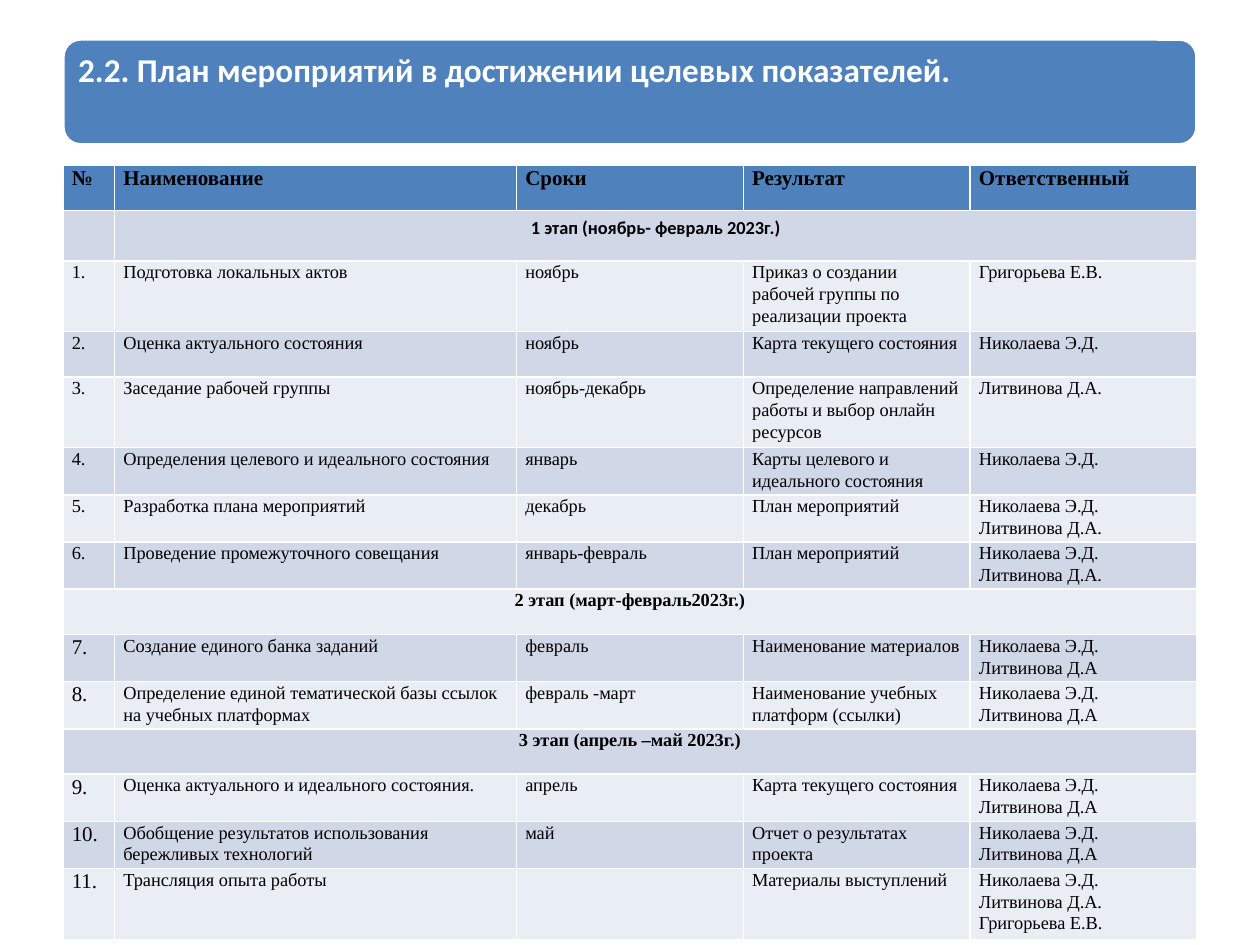
from dataclasses import dataclass

from lxml import etree
from pptx import Presentation
from pptx import util as u
from pptx.dml.color import RGBColor
from pptx.enum import shapes, text
from pptx.oxml import ns


@dataclass(frozen=True)
class Theme:
    blue: str = "4F81BD"
    dark: str = "D0D8E8"
    light: str = "E9EDF4"
    white: str = "FFFFFF"
    black: str = "000000"
    serif: str = "Times New Roman"
    sans: str = "Calibri"
    title: float = 19
    head: float = 12
    body: float = 10.5


@dataclass(frozen=True)
class Task:
    name: str
    term: str
    result: str
    staff: str
    high: float = 0.36


@dataclass(frozen=True)
class Stage:
    label: str
    tasks: tuple[Task, ...]


@dataclass(frozen=True)
class Style:
    size: float
    bold: bool = False
    font: str = Theme.serif
    color: str = Theme.black


THEME = Theme()
LEFT, WIDTH = 0.5, 9
COLS = (0.41, 3.19, 1.8, 1.8, 1.8)
LOW, TALL = 0.36, 0.54
TITLE = "2.2. План мероприятий в достижении целевых показателей.\v"
HEADS = ("№", "Наименование", "Сроки", "Результат", "Ответственный")
GRIG, NIK, LIT = "Григорьева Е.В.", "Николаева Э.Д.", "Литвинова Д.А."
PAIR = f"{NIK}\n{LIT}"
DUO = PAIR[:-1]
STAGES = (
    Stage("1 этап (ноябрь- февраль 2023г.)", (
        Task("Подготовка локальных актов", "ноябрь",
             "Приказ о создании рабочей группы по реализации проекта", GRIG, TALL),
        Task("Оценка актуального состояния", "ноябрь", "Карта текущего состояния", NIK),
        Task("Заседание рабочей группы", "ноябрь-декабрь",
             "Определение направлений работы и выбор онлайн ресурсов", LIT, TALL),
        Task("Определения целевого и идеального состояния", "январь",
             "Карты целевого и идеального состояния", NIK),
        Task("Разработка плана мероприятий", "декабрь", "План мероприятий", PAIR),
        Task("Проведение промежуточного совещания", "январь-февраль",
             "План мероприятий", PAIR),
    )),
    Stage("2 этап (март-февраль2023г.)", (
        Task("Создание единого банка заданий", "февраль", "Наименование материалов", DUO),
        Task("Определение единой тематической базы ссылок на учебных платформах",
             "февраль -март", "Наименование учебных платформ (ссылки)", DUO),
    )),
    Stage("3 этап (апрель –май 2023г.)", (
        Task("Оценка актуального и идеального состояния.", "апрель",
             "Карта текущего состояния", DUO),
        Task("Обобщение результатов использования бережливых технологий", "май",
             "Отчет о результатах проекта", DUO),
        Task("Трансляция опыта работы", "", "Материалы выступлений",
             f"{PAIR}\n{GRIG}", TALL),
    )),
)


def paint(frame, words: str, style: Style, space: float, align=None) -> None:
    frame.text = words
    for para in frame.paragraphs:
        para.line_spacing = space
        para.alignment = align
        for run in para.runs:
            run.font.size = u.Pt(style.size)
            run.font.bold = style.bold
            run.font.name = style.font
            run.font.color.rgb = RGBColor.from_string(style.color)


def dress(grid) -> None:
    for row in range(len(grid.rows)):
        color = THEME.blue if row == 0 else THEME.dark if row % 2 else THEME.light
        for col in range(len(COLS)):
            fill = grid.cell(row, col).fill
            fill.solid()
            fill.fore_color.rgb = RGBColor.from_string(color)


def write(cell, words: str, style: Style, align=None) -> None:
    if not words:
        return
    cell.margin_left = cell.margin_right = u.Inches(0.07)
    cell.margin_top = cell.margin_bottom = 0
    paint(cell.text_frame, words, style, 1.07, align)


def banner(slide) -> None:
    group = slide.shapes.add_group_shape()
    plate = group.shapes.add_shape(
        shapes.MSO_SHAPE.ROUNDED_RECTANGLE,
        u.Inches(LEFT), u.Inches(0.31), u.Inches(WIDTH), u.Inches(0.84))
    plate.shadow.inherit = False
    plate.fill.solid()
    plate.fill.fore_color.rgb = RGBColor.from_string(THEME.blue)
    plate.line.color.rgb = RGBColor.from_string(THEME.white)
    plate.line.width = u.Pt(2)
    box = group.shapes.add_textbox(
        u.Inches(0.54), u.Inches(0.35), u.Inches(8.92), u.Inches(0.76))
    frame = box.text_frame
    frame.word_wrap = True
    frame.vertical_anchor = text.MSO_ANCHOR.MIDDLE
    frame.margin_left = frame.margin_right = u.Inches(0.08)
    frame.margin_top = frame.margin_bottom = u.Inches(0.08)
    paint(frame, TITLE, Style(THEME.title, True, THEME.sans, THEME.white), 0.9)
    for gap in frame.paragraphs[0]._p.findall(ns.qn("a:br")):
        etree.SubElement(gap, ns.qn("a:rPr"), sz=str(int(THEME.title * 100)))


def label(grid, row: int, words: str) -> None:
    first = row == 1
    cell = grid.cell(row, 1 if first else 0)
    cell.merge(grid.cell(row, len(COLS) - 1))
    center = text.PP_ALIGN.CENTER
    if first:
        paint(cell.text_frame, words, Style(THEME.body, True, THEME.sans), 1, center)
    else:
        write(cell, words, Style(THEME.body, True), center)


def plan(slide) -> None:
    highs = [LOW]
    for stage in STAGES:
        highs += [0.4 if len(highs) == 1 else LOW, *(task.high for task in stage.tasks)]
    shape = slide.shapes.add_table(
        len(highs), len(COLS), u.Inches(LEFT), u.Inches(1.31),
        u.Inches(WIDTH), u.Inches(sum(highs)))
    grid = shape.table
    for col, width in zip(grid.columns, COLS):
        col.width = u.Inches(width)
    for row, high in zip(grid.rows, highs):
        row.height = u.Inches(high)
    dress(grid)
    for col, words in enumerate(HEADS):
        write(grid.cell(0, col), words, Style(THEME.head, True))
    row, count = 1, 1
    for index, stage in enumerate(STAGES):
        label(grid, row, stage.label)
        for task in stage.tasks:
            row += 1
            size = THEME.head if index else THEME.body
            write(grid.cell(row, 0), f"{count}.", Style(size))
            parts = (task.name, task.term, task.result, task.staff)
            for col, words in enumerate(parts, 1):
                write(grid.cell(row, col), words, Style(THEME.body))
            count += 1
        row += 1


def main() -> None:
    deck = Presentation()
    deck.slide_width, deck.slide_height = u.Inches(10), u.Inches(7.5)
    slide = deck.slides.add_slide(deck.slide_layouts[6])
    banner(slide)
    plan(slide)
    deck.save("out.pptx")


if __name__ == "__main__":
    main()
